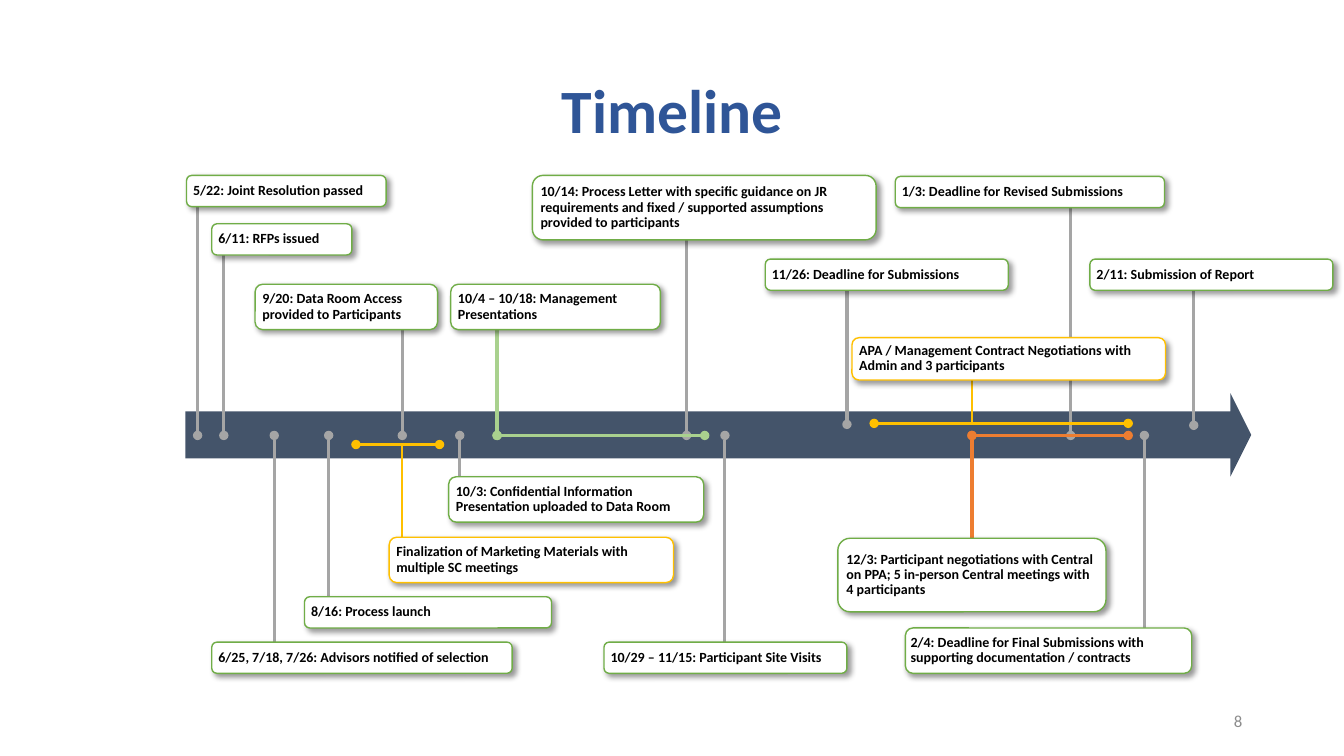
"""Build a project timeline slide with milestones above and below an arrow."""
from dataclasses import dataclass

import lxml.etree
import pptx
import pptx.dml.color
import pptx.enum.shapes
import pptx.enum.text
import pptx.oxml
import pptx.oxml.ns
import pptx.util

Inches = pptx.util.Inches
RGBColor = pptx.dml.color.RGBColor
Shapes = pptx.enum.shapes.MSO_SHAPE
Align = pptx.enum.text.PP_ALIGN
qn = pptx.oxml.ns.qn

NAVY = RGBColor(0x2F, 0x55, 0x97)
SLATE = RGBColor(0x44, 0x54, 0x6A)
WHITE = RGBColor(0xFF, 0xFF, 0xFF)
BLACK = RGBColor(0x00, 0x00, 0x00)
PAGE_GREY = RGBColor(0x8C, 0x8C, 0x8C)
GREY = RGBColor(0xA5, 0xA5, 0xA5)
GREEN = RGBColor(0x70, 0xAD, 0x47)
LIGHT_GREEN = RGBColor(0xA9, 0xD1, 0x8E)
AMBER = RGBColor(0xFF, 0xC0, 0x00)
ORANGE = RGBColor(0xED, 0x7D, 0x31)

FONT = "Calibri"
AXIS = 4.32
ONE_LINE = 0.31
TWO_LINES = 0.45
SHADOW = (
    f'<a:effectLst xmlns:a="{pptx.oxml.ns.nsuri("a")}">'
    '<a:outerShdw blurRad="50800" dist="38100" dir="2700000" algn="tl" rotWithShape="0">'
    '<a:srgbClr val="000000"><a:alpha val="40000"/></a:srgbClr>'
    "</a:outerShdw></a:effectLst>"
)


@dataclass(frozen=True)
class Milestone:
    """A labelled box with a stem that reaches the time axis."""

    text: str
    left: float
    top: float
    width: float
    stem_x: float
    height: float = ONE_LINE
    stem_end: float = AXIS
    border: RGBColor = GREEN
    stem_color: RGBColor = GREY
    stem_weight: float = 2.25
    dot: bool = True
    side_inset: float = 0.05
    end_inset: float = 0.24


@dataclass(frozen=True)
class Period:
    """A stretch of time along the axis, dotted at both ends."""

    start: float
    end: float
    level: float
    color: RGBColor


MILESTONES = [
    Milestone("5/22: Joint Resolution passed", 1.85, 1.74, 1.98, 1.96),
    Milestone("6/11: RFPs issued", 2.1, 2.22, 1.39, 2.22),
    Milestone("6/25, 7/18, 7/26: Advisors notified of selection", 2.1, 6.37, 2.98, 2.72),
    Milestone("8/16: Process launch", 3.02, 5.92, 2.45, 3.26),
    Milestone("9/20: Data Room Access provided to Participants",
              2.53, 2.82, 1.81, 3.99, TWO_LINES),
    Milestone("Finalization of Marketing Materials with multiple SC meetings",
              3.86, 5.33, 2.82, 3.99, TWO_LINES, 4.41, AMBER, AMBER, 1.5, False),
    Milestone("10/3: Confidential Information Presentation uploaded to Data Room",
              4.45, 4.73, 2.53, 4.56, TWO_LINES),
    Milestone("10/4 – 10/18: Management Presentations",
              4.47, 2.82, 2.08, 4.93, TWO_LINES, stem_color=LIGHT_GREEN),
    Milestone("10/14: Process Letter with specific guidance on JR requirements and "
              "fixed / supported assumptions provided to participants",
              5.28, 1.74, 3.41, 6.81, 0.64),
    Milestone("10/29 – 11/15: Participant Site Visits", 5.99, 6.37, 2.41, 7.19),
    Milestone("11/26: Deadline for Submissions", 7.59, 2.57, 2.41, 8.4, stem_end=4.21),
    Milestone("12/3: Participant negotiations with Central on PPA; 5 in-person "
              "Central meetings with 4 participants",
              8.31, 5.34, 2.66, 9.64, 0.73, stem_color=ORANGE),
    Milestone("1/3: Deadline for Revised Submissions", 8.88, 1.75, 2.67, 10.62),
    Milestone("APA / Management Contract Negotiations with Admin and 3 participants",
              8.45, 3.35, 3.11, 9.64, 0.42, 4.22, AMBER, AMBER, 1.5, False),
    Milestone("2/4: Deadline for Final Submissions with supporting documentation / contracts",
              8.98, 6.23, 2.84, 11.35, TWO_LINES, side_inset=0.03, end_inset=0.05),
    Milestone("2/11: Submission of Report", 10.81, 2.57, 2.41, 11.84, stem_end=4.22),
]

PERIODS = [
    Period(3.53, 4.36, 4.41, AMBER),
    Period(4.93, 6.99, AXIS, LIGHT_GREEN),
    Period(8.67, 11.19, 4.2, AMBER),
    Period(9.64, 11.19, AXIS, ORANGE),
]


def write_text(shape, text: str, size: float, color: RGBColor, bold: bool,
               align: Align, spacing: float) -> None:
    """Put one formatted run in the middle of a shape."""
    frame = shape.text_frame
    frame.word_wrap = True
    frame.vertical_anchor = pptx.enum.text.MSO_ANCHOR.MIDDLE
    paragraph = frame.paragraphs[0]
    paragraph.alignment = align
    paragraph.line_spacing = spacing
    run = paragraph.add_run()
    run.text = text
    run.font.name = FONT
    run.font.size = pptx.util.Pt(size)
    run.font.bold = bold
    run.font.color.rgb = color


def add_line(slide, start: tuple[float, float], end: tuple[float, float],
             color: RGBColor, weight: float, dots: tuple[str, ...]) -> None:
    """Draw a straight line with oval dots on the named ends."""
    connector = slide.shapes.add_connector(
        pptx.enum.shapes.MSO_CONNECTOR.STRAIGHT, *map(Inches, start + end))
    connector.line.color.rgb = color
    connector.line.width = pptx.util.Pt(weight)
    outline = connector.line._get_or_add_ln()
    for dot in dots:
        lxml.etree.SubElement(outline, qn(f"a:{dot}"), type="oval")
    lxml.etree.SubElement(connector._element.spPr, qn("a:effectLst"))


def add_stem(slide, milestone: Milestone) -> None:
    """Join a milestone box to the axis."""
    above = milestone.top < AXIS
    edge = milestone.top + milestone.height if above else milestone.top
    add_line(slide, (milestone.stem_x, edge), (milestone.stem_x, milestone.stem_end),
             milestone.stem_color, milestone.stem_weight,
             ("tailEnd",) if milestone.dot else ())


def add_box(slide, milestone: Milestone) -> None:
    """Draw the rounded, shadowed label of a milestone."""
    box = slide.shapes.add_shape(
        Shapes.ROUNDED_RECTANGLE, Inches(milestone.left), Inches(milestone.top),
        Inches(milestone.width), Inches(milestone.height))
    box.fill.solid()
    box.fill.fore_color.rgb = WHITE
    box.line.color.rgb = milestone.border
    box.line.width = pptx.util.Pt(1)
    box._element.spPr.append(pptx.oxml.parse_xml(SHADOW))
    frame = box.text_frame
    frame.margin_left = frame.margin_right = Inches(milestone.side_inset)
    frame.margin_top = frame.margin_bottom = Inches(milestone.end_inset)
    write_text(box, milestone.text, 10, BLACK, True, Align.LEFT, 0.9)


def add_axis(slide) -> None:
    """Draw the wide arrow that carries the timeline."""
    arrow = slide.shapes.add_shape(
        Shapes.RIGHT_ARROW, Inches(1.84), Inches(3.9), Inches(10.57), Inches(0.83))
    arrow.adjustments[0] = 0.56
    arrow.adjustments[1] = 0.25
    arrow.shadow.inherit = False
    arrow.fill.solid()
    arrow.fill.fore_color.rgb = SLATE
    arrow.line.fill.background()


def main() -> None:
    """Assemble and save the slide."""
    presentation = pptx.Presentation()
    presentation.slide_width = Inches(13.33)
    presentation.slide_height = Inches(7.5)
    slide = presentation.slides.add_slide(presentation.slide_layouts[6])
    title = slide.shapes.add_textbox(Inches(0.92), Inches(0.4), Inches(11.5), Inches(1.45))
    write_text(title, "Timeline", 44, NAVY, True, Align.CENTER, 0.9)
    page_number = slide.shapes.add_textbox(Inches(9.42), Inches(6.95), Inches(3), Inches(0.4))
    write_text(page_number, "8", 12, PAGE_GREY, False, Align.RIGHT, 1.0)
    add_axis(slide)
    for milestone in MILESTONES:
        add_stem(slide, milestone)
    for period in PERIODS:
        add_line(slide, (period.start, period.level), (period.end, period.level),
                 period.color, 2.25, ("headEnd", "tailEnd"))
    for milestone in MILESTONES:
        add_box(slide, milestone)
    presentation.save("out.pptx")


if __name__ == "__main__":
    main()
